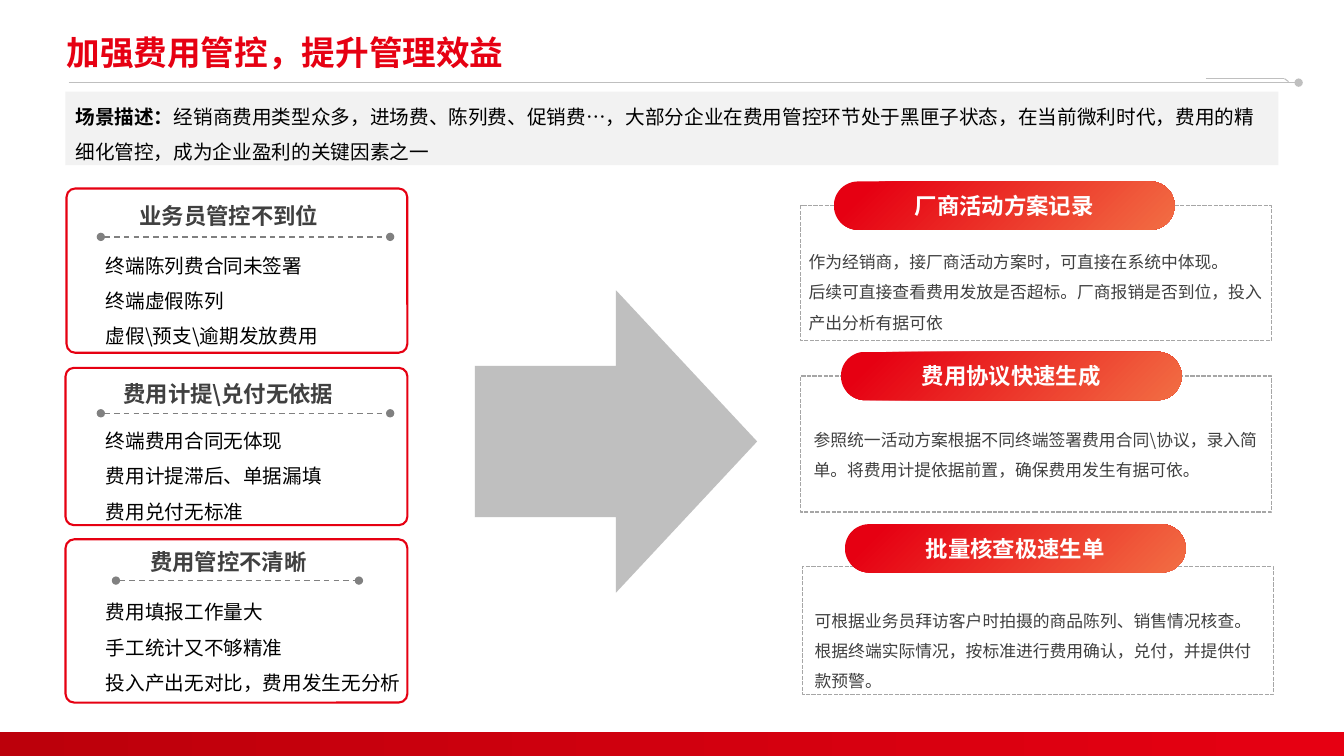
from dataclasses import dataclass

from lxml import etree
from pptx import Presentation
from pptx.dml.color import RGBColor
from pptx.enum.dml import MSO_LINE
from pptx.enum.shapes import MSO_CONNECTOR, MSO_SHAPE
from pptx.enum.text import MSO_ANCHOR, PP_ALIGN
from pptx.oxml.ns import qn
from pptx.util import Pt

PX = 9144
RECT, ROUND, ARROW = MSO_SHAPE.RECTANGLE, MSO_SHAPE.ROUNDED_RECTANGLE, MSO_SHAPE.RIGHT_ARROW
STRAIGHT = MSO_CONNECTOR.STRAIGHT
DASH, SHORT_DASH = MSO_LINE.DASH, MSO_LINE.SQUARE_DOT
TOP, MIDDLE = MSO_ANCHOR.TOP, MSO_ANCHOR.MIDDLE
LEFT, CENTER = PP_ALIGN.LEFT, PP_ALIGN.CENTER


@dataclass(frozen=True)
class Theme:
    font: str = "Noto Sans CJK SC"
    red: str = "E60012"
    dark_red: str = "BC000B"
    orange: str = "F26E44"
    white: str = "FFFFFF"
    black: str = "000000"
    ink: str = "404040"
    rule: str = "808080"
    frame: str = "A6A6A6"
    silver: str = "BFBFBF"
    pale: str = "F2F2F2"
    title: int = 24
    heading: int = 16
    body: int = 14
    note: int = 12


T = Theme()

PROBLEMS = [
    ((66, 187, 338, 163), (132, 196, 190), (100, 387, 235), (100, 235, 305),
     "业务员管控不到位",
     ["终端陈列费合同未签署", "终端虚假陈列", "虚假\\预支\\逾期发放费用"]),
    ((65, 365, 339, 156), (112, 372, 229), (100, 387, 410), (100, 409, 290),
     "费用计提\\兑付无依据",
     ["终端费用合同无体现", "费用计提滞后、单据漏填", "费用兑付无标准"]),
    ((65, 535, 339, 162), (123, 539, 207), (115, 356, 576), (100, 579, 312),
     "费用管控不清晰",
     ["费用填报工作量大", "手工统计又不够精准", "投入产出无对比，费用发生无分析"]),
]

SOLUTIONS = [
    ((794, 204, 467, 134), (827, 180), (797, 235, 460, 97), "厂商活动方案记录",
     ["作为经销商，接厂商活动方案时，可直接在系统中体现。",
      "后续可直接查看费用发放是否超标。厂商报销是否到位，投入产出分析有据可依"]),
    ((794, 373, 467, 135), (834, 349), (802, 411, 450, 67), "费用协议快速生成",
     ["参照统一活动方案根据不同终端签署费用合同\\协议，录入简单。"
      "将费用计提依据前置，确保费用发生有据可依。"]),
    ((796, 562, 467, 127), (838, 520), (803, 591, 458, 97), "批量核查极速生单",
     ["可根据业务员拜访客户时拍摄的商品陈列、销售情况核查。",
      "根据终端实际情况，按标准进行费用确认，兑付，并提供付款预警。"]),
]


def rgb(color):
    return RGBColor.from_string(color)


def emu(*lengths):
    return [n * PX for n in lengths]


def add_run(p, text, size, color, bold=False):
    r = p.add_run()
    r.text = text
    r.font.size = Pt(size)
    r.font.bold = bold
    r.font.color.rgb = rgb(color)
    r.font.name = T.font
    etree.SubElement(r.font._element, qn("a:ea")).set("typeface", T.font)


def set_frame(sp, anchor=TOP, inset=(5, 5), wrap=True):
    tf = sp.text_frame
    tf.word_wrap = wrap
    tf.vertical_anchor = anchor
    tf.margin_left = tf.margin_right = inset[0] * PX
    tf.margin_top = tf.margin_bottom = inset[1] * PX
    return tf


def add_paragraphs(tf, lines, size, color, bold=False, align=LEFT, spacing=1.0):
    for i, line in enumerate(lines):
        p = tf.add_paragraph() if i else tf.paragraphs[0]
        p.alignment = align
        p.line_spacing = spacing
        add_run(p, line, size, color, bold)


def add_text(s, box, lines, size, color, wrap=True, anchor=TOP, inset=(5, 5), **style):
    sp = s.shapes.add_textbox(*emu(*box))
    add_paragraphs(set_frame(sp, anchor, inset, wrap), lines, size, color, **style)


def add_box(s, kind, box, fill=None, alpha=None, line=None, width=1, dash=None, radius=None):
    sp = s.shapes.add_shape(kind, *emu(*box))
    sp.shadow.inherit = False
    if radius is not None:
        sp.adjustments[0] = radius
    if fill:
        sp.fill.solid()
        sp.fill.fore_color.rgb = rgb(fill)
    if alpha:
        clr = sp._element.spPr.find(qn("a:solidFill"))[0]
        etree.SubElement(clr, qn("a:alpha")).set("val", str(alpha * 1000))
    if line:
        sp.line.color.rgb = rgb(line)
        sp.line.width = Pt(width)
        sp.line.dash_style = dash
    else:
        sp.line.fill.background()
    return sp


def add_gradient(s, kind, box, stops, angle=0, radius=None):
    sp = add_box(s, kind, box, radius=radius)
    sp.fill.gradient()
    sp.fill.gradient_angle = angle
    for stop, (position, color) in zip(sp.fill.gradient_stops, stops):
        stop.position = position
        stop.color.rgb = rgb(color)
    return sp


def add_line(s, start, end, color, width, dash=None, dots=()):
    c = s.shapes.add_connector(STRAIGHT, *emu(*start, *end))
    c.line.color.rgb = rgb(color)
    c.line.width = Pt(width)
    c.line.dash_style = dash
    spPr = c._element.spPr
    for dot in dots:
        etree.SubElement(spPr.find(qn("a:ln")), qn(f"a:{dot}")).set("type", "oval")
    etree.SubElement(spPr, qn("a:effectLst"))


def add_header(s):
    add_gradient(s, RECT, (0, 726, 1333, 24), [(0, T.dark_red), (1, T.red)])
    add_line(s, (68, 82), (1288, 82), T.silver, 0.75, dots=["tailEnd"])
    add_line(s, (1196, 78), (1274, 78), T.silver, 0.75)
    add_line(s, (1274, 78), (1278, 81), T.silver, 0.75)
    add_text(s, (66, 29, 1008, 50), ["加强费用管控，提升管理效益"], T.title, T.red,
             anchor=MIDDLE, inset=(0, 5), bold=True, spacing=0.9)


def add_scene(s):
    sp = add_box(s, RECT, (65, 91, 1203, 73), T.pale)
    tf = set_frame(sp, MIDDLE, (10, 5))
    add_paragraphs(tf, ["场景描述："], T.body, T.black, bold=True, spacing=1.5)
    add_run(tf.paragraphs[0],
            "经销商费用类型众多，进场费、陈列费、促销费…，大部分企业在费用管控环节处于黑匣子状态，"
            "在当前微利时代，费用的精细化管控，成为企业盈利的关键因素之一", T.body, T.black)


def add_problem(s, panel, head, rule, body, heading, lines):
    add_box(s, ROUND, panel, T.white, 67, T.red, 1.5, radius=0.053)
    x1, x2, y = rule
    add_line(s, (x1, y), (x2, y), T.rule, 1, DASH, ["headEnd", "tailEnd"])
    add_text(s, (*head, 37), [heading], T.heading, T.ink, wrap=False, bold=True, align=CENTER)
    add_text(s, (*body, 112), lines, T.body, T.black, spacing=1.5)


def add_solution(s, panel, pill, note, heading, lines):
    add_box(s, RECT, panel, T.white, 60, T.frame, 1, SHORT_DASH)
    sp = add_gradient(s, ROUND, (*pill, 338, 48), [(0.1, T.red), (1, T.orange)], 315, 0.5)
    add_paragraphs(set_frame(sp, MIDDLE), [heading], T.heading, T.white, True, CENTER)
    add_text(s, note, lines, T.note, T.ink, spacing=1.5)


def main():
    prs = Presentation()
    prs.slide_width, prs.slide_height = emu(1333, 750)
    s = prs.slides.add_slide(prs.slide_layouts[6])
    add_header(s)
    add_scene(s)
    for problem in PROBLEMS:
        add_problem(s, *problem)
    for solution in SOLUTIONS:
        add_solution(s, *solution)
    add_box(s, ARROW, (471, 288, 280, 300), T.silver)
    prs.save("out.pptx")


if __name__ == "__main__":
    main()
